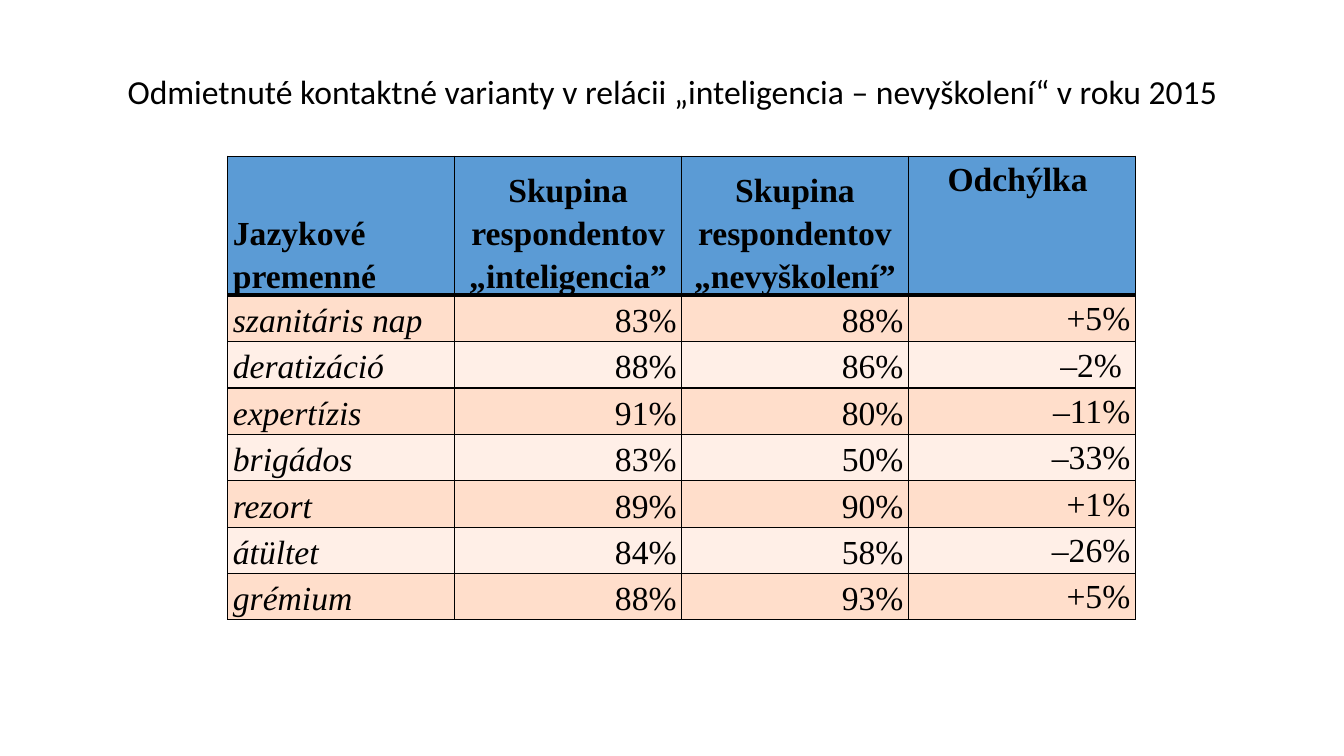
from lxml import etree
from pptx import Presentation
from pptx import util as u
from pptx.dml.color import RGBColor
from pptx.enum import text
from pptx.oxml.ns import qn

COLORS = {
    "ink": "000000",
    "header": "5B9BD5",
    "odd_row": "FFDECB",
    "even_row": "FFEFE7",
}
TITLE = "Odmietnuté kontaktné varianty v relácii „inteligencia – nevyškolení“ v roku 2015"
HEADER = (
    "Jazykové premenné",
    "Skupina respondentov „inteligencia”",
    "Skupina respondentov „nevyškolení”",
    "Odchýlka ",
)
VARIANTS = [
    ("szanitáris nap", "83%", "88%", "+5%"),
    ("deratizáció", "88%", "86%", "–2% "),
    ("expertízis", "91%", "80%", "–11%"),
    ("brigádos", "83%", "50%", "–33%"),
    ("rezort", "89%", "90%", "+1%"),
    ("átültet", "84%", "58%", "–26%"),
    ("grémium", "88%", "93%", "+5%"),
]
HEADER_HEIGHT = 1.38
ROW_HEIGHT = 0.46


def color(key):
    return RGBColor.from_string(COLORS[key])


def style_paragraph(paragraph, font_name, align, spacing):
    paragraph.alignment = align
    paragraph.line_spacing = spacing
    paragraph.font.name = font_name
    paragraph.font.size = u.Pt(24)
    paragraph.font.color.rgb = color("ink")


def add_title(slide, left, top, width, height):
    title = slide.shapes.title
    title.left, title.top = u.Inches(left), u.Inches(top)
    title.width, title.height = u.Inches(width), u.Inches(height)
    title.text_frame.text = TITLE
    title.text_frame.vertical_anchor = text.MSO_ANCHOR.MIDDLE
    style_paragraph(title.text_frame.paragraphs[0], "Calibri", text.PP_ALIGN.CENTER, 0.9)


def set_borders(cell, **widths):
    """Draw cell borders; widths in points are keyed L, R, T, B in schema order."""
    properties = cell._tc.get_or_add_tcPr()
    for side, width in widths.items():
        line = etree.SubElement(properties, qn(f"a:ln{side}"), w=str(u.Pt(width)))
        fill = etree.SubElement(line, qn("a:solidFill"))
        etree.SubElement(fill, qn("a:srgbClr"), val=COLORS["ink"])


def fill_cell(cell, wording, row, column):
    is_header = row == 0
    is_deviation = column == len(HEADER) - 1
    cell.margin_left = cell.margin_right = u.Inches(0.05)
    cell.margin_top = cell.margin_bottom = 0
    if is_deviation:
        cell.vertical_anchor = text.MSO_ANCHOR.TOP
    else:
        cell.vertical_anchor = text.MSO_ANCHOR.BOTTOM if is_header else text.MSO_ANCHOR.MIDDLE

    set_borders(cell, L=1, R=1, T=3 if row == 1 else 1, B=3 if is_header else 1)
    cell.fill.solid()
    cell.fill.fore_color.rgb = color("header" if is_header else "odd_row" if row % 2 else "even_row")

    cell.text = wording
    paragraph = cell.text_frame.paragraphs[0]
    if column == 0:
        align = text.PP_ALIGN.LEFT
    else:
        align = text.PP_ALIGN.CENTER if is_header else text.PP_ALIGN.RIGHT
    style_paragraph(paragraph, "Times New Roman", align, 1.15)
    paragraph.font.bold = is_header
    paragraph.font.italic = column == 0 and not is_header


def add_variants_table(slide, left, top, width):
    rows = [HEADER, *VARIANTS]
    height = HEADER_HEIGHT + ROW_HEIGHT * len(VARIANTS)
    table = slide.shapes.add_table(
        len(rows), len(HEADER),
        u.Inches(left), u.Inches(top), u.Inches(width), u.Inches(height),
    ).table
    for column in table.columns:
        column.width = u.Inches(width / len(HEADER))
    for r, wordings in enumerate(rows):
        table.rows[r].height = u.Inches(ROW_HEIGHT if r else HEADER_HEIGHT)
        for c, wording in enumerate(wordings):
            fill_cell(table.cell(r, c), wording, r, c)


def main():
    deck = Presentation()
    deck.slide_width, deck.slide_height = u.Inches(13.33), u.Inches(7.5)
    slide = deck.slides.add_slide(deck.slide_layouts[5])
    add_title(slide, 0.67, 0.3, 12, 1.25)
    add_variants_table(slide, 2.26, 1.55, 9)
    deck.save("out.pptx")


if __name__ == "__main__":
    main()
